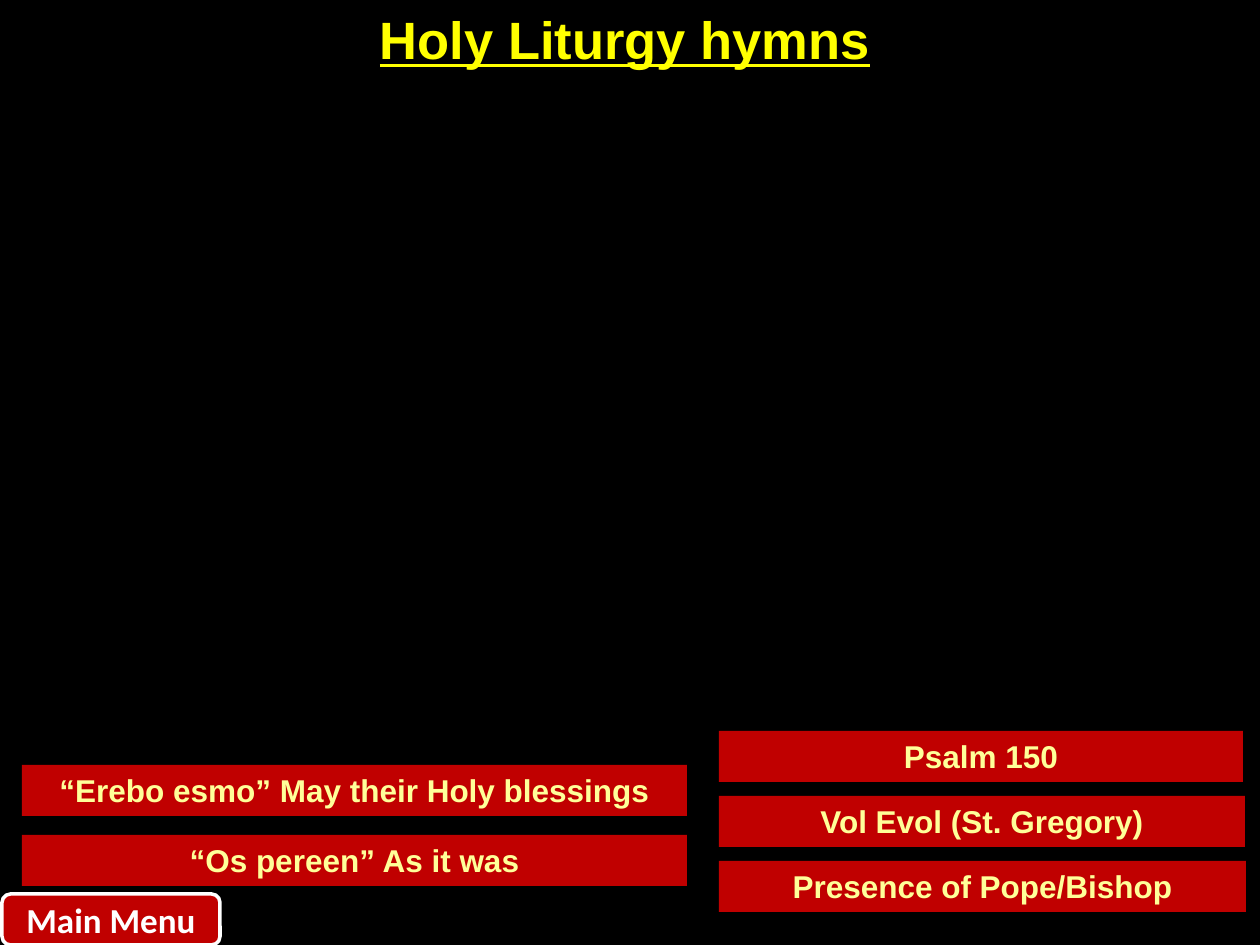
import pptx
import pptx.util
import pptx.dml.color
import pptx.enum.shapes
import pptx.enum.text
import pptx.oxml.ns
import lxml.etree

SCALE = 914400 / 126  # EMU in one px
KIND = pptx.enum.shapes.MSO_SHAPE
ANCHOR = pptx.enum.text.MSO_ANCHOR
RED = "C00000"


def px(*sizes):
    return [round(size * SCALE) for size in sizes]


def paint(color, code):
    color.rgb = pptx.dml.color.RGBColor.from_string(code)


def write(frame, text, size, code, face="Arial"):
    para = frame.paragraphs[0]
    para.text = text
    para.alignment = pptx.enum.text.PP_ALIGN.CENTER
    font = para.font
    font.name, font.size, font.bold = face, pptx.util.Pt(size), True
    paint(font.color, code)
    return font


def add_title(slide, box, text):
    table = slide.shapes.add_table(1, 1, *px(*box)).table
    table.first_row = table.horz_banding = False
    cell = table.cell(0, 0)
    # Borders off; they come before the fill
    props = cell._tc.get_or_add_tcPr()
    for side in ("a:lnL", "a:lnR", "a:lnT", "a:lnB"):
        line = lxml.etree.SubElement(props, pptx.oxml.ns.qn(side))
        lxml.etree.SubElement(line, pptx.oxml.ns.qn("a:noFill"))
    cell.fill.background()
    write(cell.text_frame, text, 30, "FFFF00").underline = True


def add_block(slide, kind, box, anchor):
    shape = slide.shapes.add_shape(kind, *px(*box))
    shape.shadow.inherit = False
    shape.fill.solid()
    paint(shape.fill.fore_color, RED)
    shape.line.fill.background()
    shape.text_frame.word_wrap = True
    shape.text_frame.vertical_anchor = anchor
    return shape


def add_links(slide, left, top, step, links):
    for row, (text, width) in enumerate(links):
        box = (left, top + row * step, width, 51)
        frame = add_block(slide, KIND.RECTANGLE, box, ANCHOR.TOP).text_frame
        frame.auto_size = pptx.enum.text.MSO_AUTO_SIZE.SHAPE_TO_FIT_TEXT
        write(frame, text, 18, "FFFF99")


def add_menu(slide, box, text):
    shape = add_block(slide, KIND.ROUNDED_RECTANGLE, box, ANCHOR.MIDDLE)
    shape.line.fill.solid()
    paint(shape.line.color, "FFFFFF")
    shape.line.width = pptx.util.Pt(2)
    write(shape.text_frame, text, 20, "FFFFFF", "Calibri")


def main():
    deck = pptx.Presentation()
    deck.slide_width, deck.slide_height = px(1260, 945)
    slide = deck.slides.add_slide(deck.slide_layouts[6])
    slide.background.fill.solid()
    paint(slide.background.fill.fore_color, "000000")

    add_title(slide, (44, 6, 1162, 110), "Holy Liturgy hymns")
    # Left and right columns of hymns
    add_links(slide, 22, 765, 70, [
        ("“Erebo esmo” May their Holy blessings", 665),
        ("“Os pereen” As it was", 665),
    ])
    add_links(slide, 719, 731, 65, [
        ("Psalm 150", 524),
        ("Vol Evol (St. Gregory)", 526),
        ("Presence of Pope/Bishop", 527),
    ])
    add_menu(slide, (2, 894, 218, 51), "Main Menu")
    deck.save("out.pptx")


if __name__ == "__main__":
    main()
